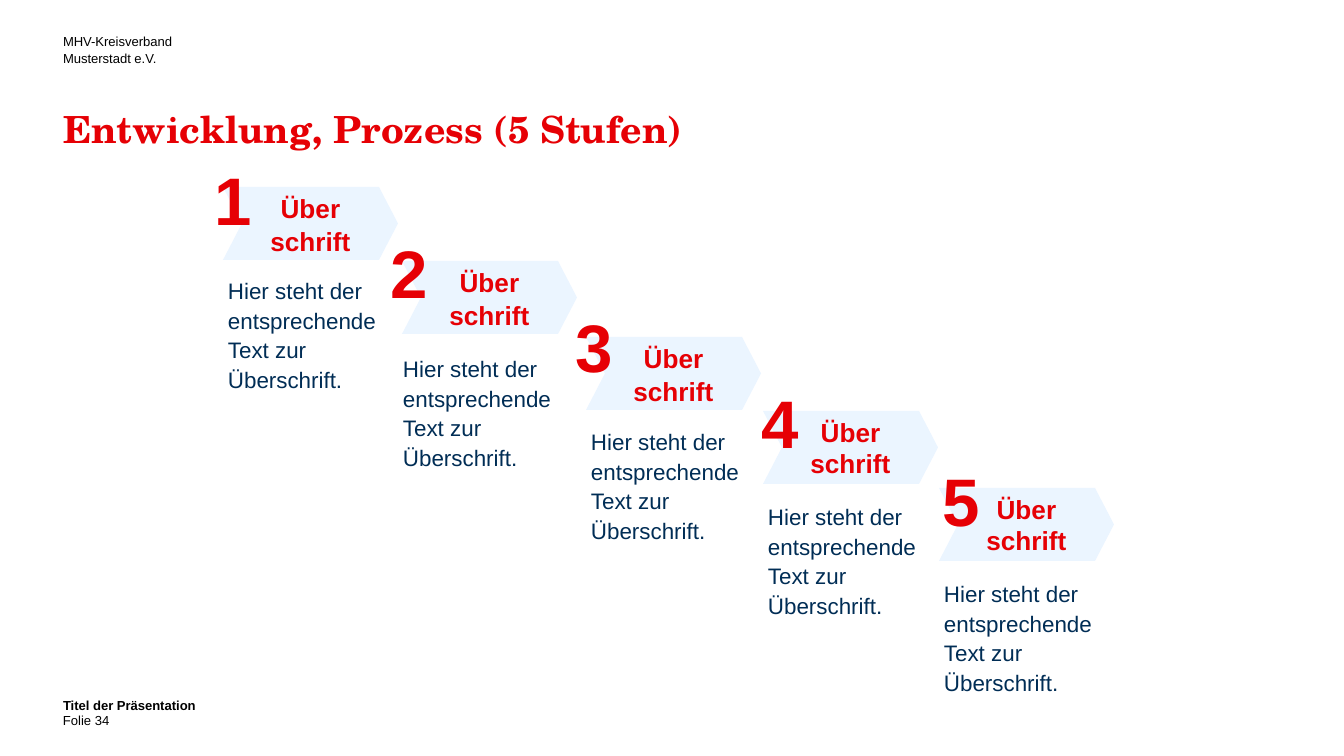
import pptx
import pptx.util
import pptx.dml.color
import pptx.enum.shapes
import pptx.enum.text

PX = 914400 / 134.4
RED, NAVY, PALE, BLACK = "E60005", "002D55", "EBF5FF", "000000"
TITLE = "Entwicklung, Prozess (5 Stufen)"
HEAD = "Über schrift"
BODY = "Hier steht der entsprechende Text zur Überschrift."
STEPS = [
    dict(arrow=(223, 187), body=(223, 274), digit=(214, 157), line=18),
    dict(arrow=(402, 261), body=(398, 352), digit=(390, 230), line=18),
    dict(arrow=(586, 337), body=(586, 425), digit=(575, 304), line=18),
    dict(arrow=(763, 411), body=(763, 500), digit=(761, 380), line=None),
    dict(arrow=(939, 488), body=(939, 577), digit=(942, 458), line=None),
]
TOP = pptx.enum.text.MSO_ANCHOR.TOP
MID = pptx.enum.text.MSO_ANCHOR.MIDDLE
LOW = pptx.enum.text.MSO_ANCHOR.BOTTOM
LEFT = pptx.enum.text.PP_ALIGN.LEFT
MARKS = [
    ("MHV-Kreisverband\nMusterstadt e.V.", (63, 32, 241, 34), False, TOP),
    ("Titel der Präsentation", (63, 696, 1218, 12), True, TOP),
    ("Folie", (63, 711, 40, 17), False, LOW),
    ("34", (95, 712, 302, 16), False, LOW),
]


def emu(n):
    return round(n * PX)


def paint(color, code):
    color.rgb = pptx.dml.color.RGBColor.from_string(code)


def write(shape, text, size, code, bold=False, line=None, font="Arial",
          anchor=TOP, align=LEFT, inset=0, indent=0):
    frame = shape.text_frame
    frame.text = text
    frame.word_wrap = True
    frame.auto_size = pptx.enum.text.MSO_AUTO_SIZE.NONE
    frame.vertical_anchor = anchor
    frame.margin_left = frame.margin_right = emu(inset)
    frame.margin_top = frame.margin_bottom = emu(inset)
    for para in frame.paragraphs:
        para.alignment = align
        if line:
            para.line_spacing = pptx.util.Pt(line)
        if indent:
            props = para._p.get_or_add_pPr()
            props.set("marL", str(emu(indent)))
            props.set("indent", "0")
        for run in para.runs:
            run.font.size = pptx.util.Pt(size)
            run.font.name = font
            run.font.bold = bold
            paint(run.font.color, code)
    return frame


deck = pptx.Presentation()
deck.slide_width, deck.slide_height = emu(1344), emu(756)
slide = deck.slides.add_slide(deck.slide_layouts[5])
shapes = slide.shapes


def add_text(box, *args, **style):
    return write(shapes.add_textbox(*map(emu, box)), *args, **style)


title = shapes.title
title.left, title.top, title.width, title.height = map(emu, (63, 106, 1218, 86))
write(title, TITLE, 20, RED, True, 24, "TeX Gyre Schola")

for text, box, bold, anchor in MARKS:
    add_text(box, text, 7, BLACK, bold, 9, anchor=anchor)

for num, step in enumerate(STEPS, 1):
    arrow = shapes.add_shape(pptx.enum.shapes.MSO_SHAPE.CHEVRON,
                             *map(emu, (*step["arrow"], 175, 73)))
    arrow.adjustments[0] = 0.26
    arrow.shadow.inherit = False
    arrow.fill.solid()
    paint(arrow.fill.fore_color, PALE)
    arrow.line.fill.background()
    write(arrow, HEAD, 14, RED, True, step["line"], anchor=MID,
          align=pptx.enum.text.PP_ALIGN.CENTER, inset=20)
    add_text((*step["body"], 157, 136), BODY, 12, NAVY, line=16, indent=5)
    frame = add_text((*step["digit"], 42, 84), str(num), 36, RED, True, indent=1)
    frame.margin_top = emu(1)
    frame.paragraphs[0].runs[0].font._element.set("spc", "-10")

deck.save("out.pptx")
